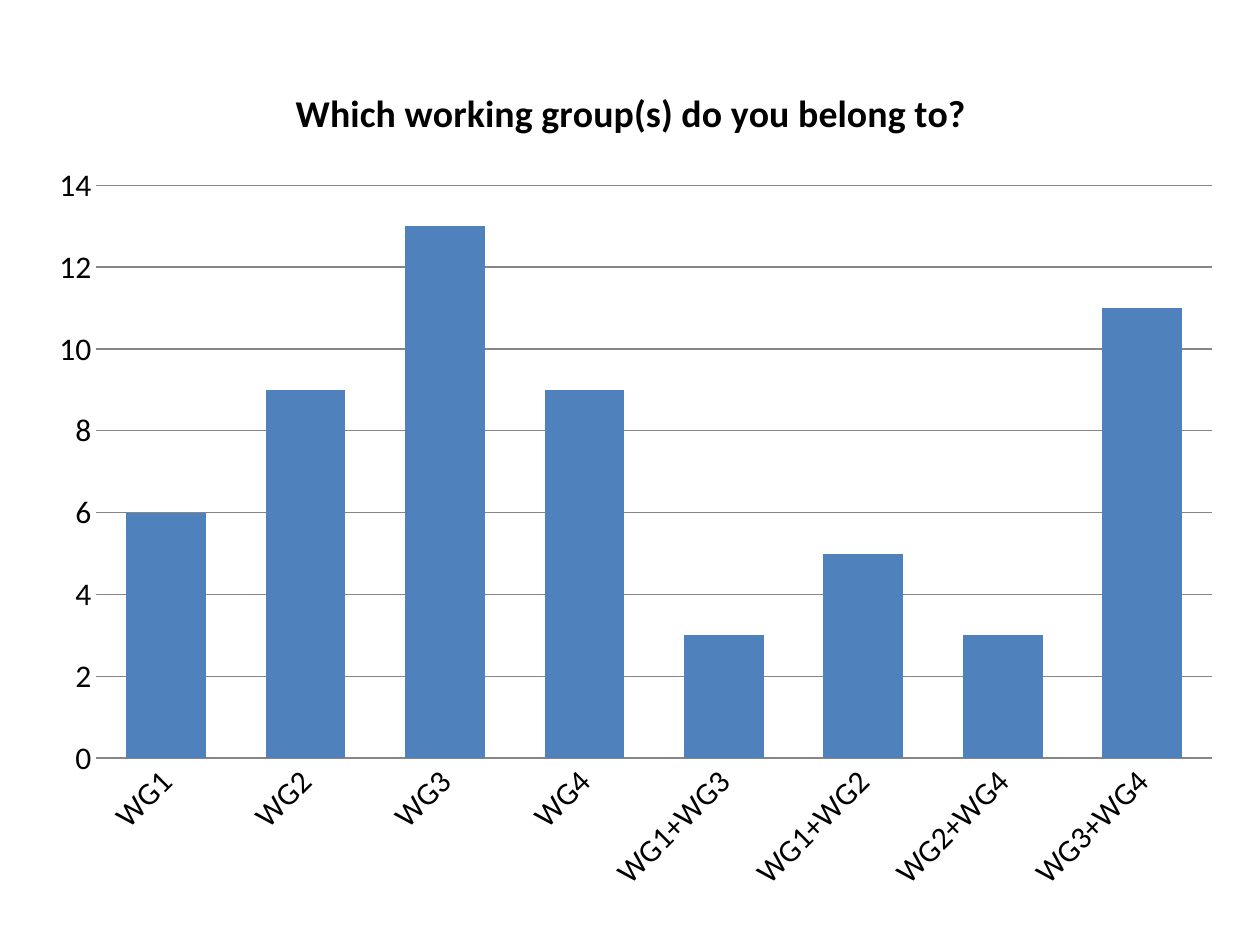
from pptx import Presentation
from pptx.chart.data import CategoryChartData
from pptx.dml.color import RGBColor
from pptx.enum.chart import XL_CHART_TYPE as ChartType, XL_TICK_MARK as Tick
from pptx.oxml.ns import qn
from pptx.util import Inches, Pt

GROUPS = {
    "WG1": 6, "WG2": 9, "WG3": 13, "WG4": 9,
    "WG1+WG3": 3, "WG1+WG2": 5, "WG2+WG4": 3, "WG3+WG4": 11,
}


def paint(fmt, color):
    fmt.solid()
    fmt.fore_color.rgb = RGBColor.from_string(color)


def style_font(font, size, bold=False):
    font.name = "Calibri"
    font.size = Pt(size)
    font.bold = bold
    paint(font.fill, "000000")


def style_line(line):
    line.width = Pt(0.75)
    paint(line.fill, "868686")


def add_title(chart, text):
    chart.has_title = True
    chart.chart_title.include_in_layout = False
    r = chart.chart_title.text_frame.paragraphs[0].add_run()
    r.text = text
    style_font(r.font, 21.6, True)


def style_axes(chart):
    cat, val = chart.category_axis, chart.value_axis
    for axis in (cat, val):
        axis.major_tick_mark = axis.minor_tick_mark = Tick.NONE
        style_font(axis.tick_labels.font, 18)
    style_line(cat.format.line)
    cat._element.find(qn("c:txPr")).find(qn("a:bodyPr")).set("rot", "-2700000")
    val.format.line.fill.background()
    val.minimum_scale, val.maximum_scale, val.major_unit = 0, 14, 2
    val.has_major_gridlines = True
    style_line(val.major_gridlines.format.line)


def add_group_chart(s, x, y, w, h):
    data = CategoryChartData()
    data.categories = list(GROUPS)
    data.add_series("Series 1", list(GROUPS.values()))
    chart = s.shapes.add_chart(ChartType.COLUMN_CLUSTERED, x, y, w, h, data).chart
    style_font(chart.font, 18)
    chart.has_legend = False
    add_title(chart, "Which working group(s) do you belong to? ")
    style_axes(chart)
    plot = chart.plots[0]
    plot.gap_width = 75
    plot.overlap = -25
    plot.vary_by_categories = False
    paint(plot.series[0].format.fill, "4F81BD")


def main():
    prs = Presentation()
    prs.slide_width, prs.slide_height = Inches(10), Inches(7.5)
    s = prs.slides.add_slide(prs.slide_layouts[6])
    add_group_chart(s, Inches(0.28), Inches(0.44), Inches(9.53), Inches(6.77))
    prs.save("out.pptx")


if __name__ == "__main__":
    main()
